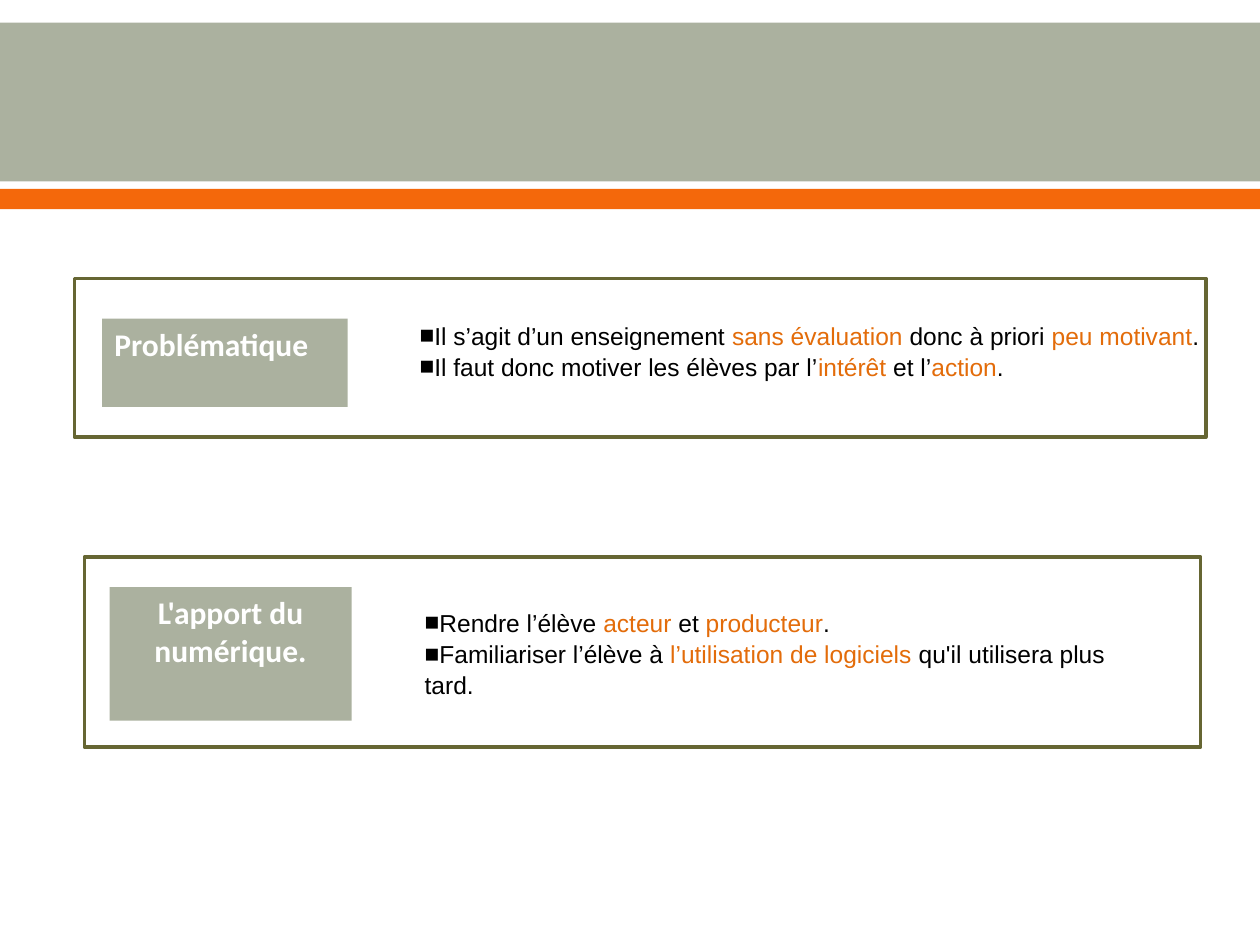
from lxml import etree
from pptx import Presentation
from pptx import util as u
from pptx.dml.color import RGBColor
from pptx.enum import shapes, text
from pptx.oxml.ns import qn

COLORS = {
    "sage": "ABB19F",
    "orange": "F4680B",
    "accent": "E36C0A",
    "olive": "666633",
    "black": "000000",
    "white": "FFFFFF",
}
COLUMNS, ROWS = 100, 75


def color(name):
    return RGBColor.from_string(COLORS[name])


def add_text(paragraph, content, font="Arial", size=14, ink="black", bold=False):
    run = paragraph.add_run()
    run.text = content
    run.font.name = font
    run.font.size = u.Pt(size)
    run.font.bold = bold
    run.font.color.rgb = color(ink)


class SlideBuilder:
    """Holds the grid, the style and the current slide."""

    def __init__(self, presentation):
        self.column = presentation.slide_width / COLUMNS
        self.row = presentation.slide_height / ROWS
        self.slide = presentation.slides.add_slide(presentation.slide_layouts[6])

    def place(self, left, top, width, height):
        return [round(length) for length in (
            left * self.column, top * self.row,
            width * self.column, height * self.row)]

    def rectangle(self, area, fill=None, line=None):
        shape = self.slide.shapes.add_shape(
            shapes.MSO_SHAPE.RECTANGLE, *self.place(*area))
        shape.shadow.inherit = False
        if fill:
            shape.fill.solid()
            shape.fill.fore_color.rgb = color(fill)
        else:
            shape.fill.background()
        if line:
            shape.line.color.rgb = color(line)
            shape.line.width = u.Pt(2)
        else:
            shape.line.fill.background()
        return shape

    def label(self, area, content, alignment):
        frame = self.rectangle(area, fill="sage").text_frame
        frame.word_wrap = True
        frame.vertical_anchor = text.MSO_ANCHOR.TOP
        paragraph = frame.paragraphs[0]
        paragraph.alignment = alignment
        paragraph.space_after = u.Pt(10)
        add_text(paragraph, content, font="Calibri", size=18, ink="white", bold=True)

    def bullets(self, area, items):
        """Each item alternates plain and accented pieces."""
        frame = self.slide.shapes.add_textbox(*self.place(*area)).text_frame
        frame.word_wrap = True
        frame.margin_left = frame.margin_right = 0
        frame.margin_top = frame.margin_bottom = 0
        for index, pieces in enumerate(items):
            paragraph = frame.add_paragraph() if index else frame.paragraphs[0]
            paragraph.level = 1
            paragraph.line_spacing = 1.06
            properties = paragraph._p.get_or_add_pPr()
            properties.set("marL", str(u.Inches(0.5)))
            properties.set("indent", "0")
            etree.SubElement(properties, qn("a:buFont"), typeface="Arial")
            etree.SubElement(properties, qn("a:buChar"), char="■")
            for position, piece in enumerate(pieces):
                add_text(paragraph, piece, ink="accent" if position % 2 else "black")


def main():
    presentation = Presentation()
    presentation.slide_width = u.Inches(10)
    presentation.slide_height = u.Inches(7.5)
    builder = SlideBuilder(presentation)

    # Header bands
    builder.rectangle((0, 1.8, COLUMNS, 12.6), fill="sage")
    builder.rectangle((0, 15, COLUMNS, 1.6), fill="orange")

    # Framed sections: bullets, frame, label
    sections = [
        ((28.3, 25.3, 67.4, 8.2), (5.9, 22.1, 89.8, 12.6), (8.1, 25.3, 19.5, 7),
         "Problématique", text.PP_ALIGN.LEFT,
         [["Il s’agit d’un enseignement ", "sans évaluation",
           " donc à priori ", "peu motivant", "."],
          ["Il faut donc motiver les élèves par l’", "intérêt",
           " et l’", "action", "."]]),
        ((28.7, 48.1, 62.2, 9.8), (6.7, 44.2, 88.6, 15.1), (8.7, 46.6, 19.2, 10.6),
         "L'apport du numérique.", text.PP_ALIGN.CENTER,
         [["Rendre l’élève ", "acteur", " et ", "producteur", "."],
          ["Familiariser l’élève à ", "l’utilisation de logiciels",
           " qu'il utilisera plus tard."]]),
    ]
    for bullet_area, frame_area, label_area, title, alignment, items in sections:
        builder.bullets(bullet_area, items)
        builder.rectangle(frame_area, line="olive")
        builder.label(label_area, title, alignment)

    presentation.save("out.pptx")


if __name__ == "__main__":
    main()
